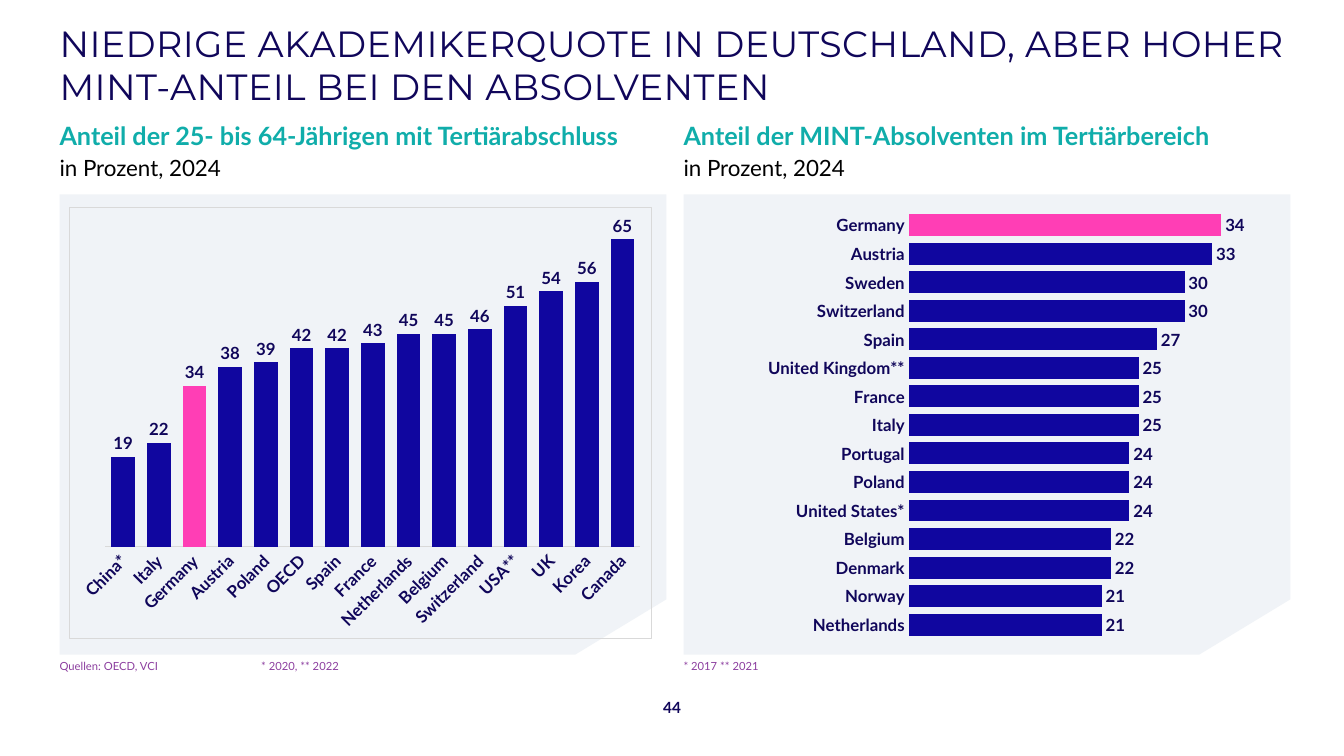
import dataclasses
import pptx
import pptx.chart.data
import pptx.dml.color
import pptx.enum.chart
import pptx.enum.text
import pptx.oxml
import pptx.util
from pptx.oxml.ns import nsdecls, qn


@dataclasses.dataclass(frozen=True)
class Theme:
    head: str = "Montserrat"
    body: str = "Lato"
    ink: str = "10065A"
    bar: str = "10069F"
    mark: str = "FF3EB5"
    teal: str = "10ADAA"
    note: str = "8C3E9F"
    black: str = "000000"
    panel: str = "F0F3F7"
    rule: str = "D9D9D9"
    title: int = 26
    lead: int = 18
    unit: int = 16
    label: int = 12
    page: int = 11
    small: int = 8


THEME = Theme()
WIDE = pptx.util.Inches(13.33)
HIGH = pptx.util.Inches(7.5)
LEFT, PITCH, COL = 4.43, 46.43, 45.16
TOP, DEEP = 25.73, 60.85
CUT = [(1, 0), (1, 0.88), (0.85, 1), (0, 1)]
Anchor = pptx.enum.text.MSO_ANCHOR
Align = pptx.enum.text.PP_ALIGN
Kind = pptx.enum.chart.XL_CHART_TYPE
Tick = pptx.enum.chart.XL_TICK_MARK

SHARES = [
    ("China*", 19), ("Italy", 22), ("Germany", 34), ("Austria", 38),
    ("Poland", 39), ("OECD", 42), ("Spain", 42), ("France", 43),
    ("Netherlands", 45), ("Belgium", 45), ("Switzerland", 46),
    ("USA**", 51), ("UK", 54), ("Korea", 56), ("Canada", 65),
]
GRADS = [
    ("Netherlands", 21), ("Norway", 21), ("Denmark", 22), ("Belgium", 22),
    ("United States*", 24), ("Poland", 24), ("Portugal", 24), ("Italy", 25),
    ("France", 25), ("United Kingdom**", 25), ("Spain", 27),
    ("Switzerland", 30), ("Sweden", 30), ("Austria", 33), ("Germany", 34),
]


def color(code):
    return pptx.dml.color.RGBColor.from_string(code)


def area(left, top, width, height):
    return [round(share * side / 100) for share, side in
            zip((left, top, width, height), (WIDE, HIGH, WIDE, HIGH))]


def style(font, size, code, bold=False, face=THEME.body):
    font.name = face
    font.size = pptx.util.Pt(size)
    font.bold = bold
    font.color.rgb = color(code)


def add_text(slide, box, text, size, code, bold=False, face=THEME.body,
             anchor=Anchor.TOP, align=Align.LEFT, tab=None, track=None):
    frame = slide.shapes.add_textbox(*area(*box)).text_frame
    frame.word_wrap = True
    frame.vertical_anchor = anchor
    frame.margin_left = frame.margin_right = 0
    frame.margin_top = frame.margin_bottom = 0
    para = frame.paragraphs[0]
    para.alignment = align
    if tab:
        stop = f'<a:tabLst {nsdecls("a")}><a:tab pos="{tab}" algn="l"/></a:tabLst>'
        para._p.get_or_add_pPr().append(pptx.oxml.parse_xml(stop))
    run = para.add_run()
    run.text = text
    style(run.font, size, code, bold, face)
    if track:
        run._r.get_or_add_rPr().set("spc", str(track))


def add_panel(slide, left):
    x, y, width, height = area(left, TOP, COL, DEEP)
    form = slide.shapes.build_freeform(x, y)
    form.add_line_segments(
        [(round(x + a * width), round(y + b * height)) for a, b in CUT])
    shape = form.convert_to_shape()
    shape.shadow.inherit = False
    shape.fill.solid()
    shape.fill.fore_color.rgb = color(THEME.panel)
    shape.line.fill.background()


def frame_chart(chart, edge):
    fill = f'<a:solidFill><a:srgbClr val="{THEME.rule}"/></a:solidFill>'
    line = fill if edge else "<a:noFill/>"
    xml = (f'<c:spPr {nsdecls("c", "a")}><a:noFill/>'
           f'<a:ln w="9525">{line}</a:ln></c:spPr>')
    chart._chartSpace.find(qn("c:txPr")).addprevious(pptx.oxml.parse_xml(xml))


def place_plot(chart, box):
    plot = chart._chartSpace.chart.plotArea
    for old in plot.findall(qn("c:layout")):
        plot.remove(old)
    modes = "".join(f'<c:{key}Mode val="edge"/>' for key in "xy")
    sides = "".join(f'<c:{key} val="{val}"/>' for key, val in zip("xywh", box))
    xml = (f'<c:layout {nsdecls("c")}><c:manualLayout>'
           f'<c:layoutTarget val="inner"/>{modes}{sides}'
           f'</c:manualLayout></c:layout>')
    plot.insert(0, pptx.oxml.parse_xml(xml))


def add_bars(slide, left, kind, rows, top, gap, edge=False, turn=None, plot=None):
    data = pptx.chart.data.CategoryChartData()
    names, values = zip(*rows)
    data.categories = names
    data.add_series("Series 1", values)
    box = area(left + 0.68, TOP + 1.6, 43.44, 57.2)
    chart = slide.shapes.add_chart(kind, *box, data).chart
    chart.has_title = chart.has_legend = False
    style(chart.font, THEME.label, THEME.ink, True)
    frame_chart(chart, edge)
    if plot:
        place_plot(chart, plot)

    scale = chart.value_axis
    scale.minimum_scale, scale.maximum_scale = 0, top
    scale.has_major_gridlines = False
    scale.visible = False
    axis = chart.category_axis
    axis.major_tick_mark = axis.minor_tick_mark = Tick.NONE
    style(axis.tick_labels.font, THEME.label, THEME.ink, True)
    if turn:
        body = axis._element.find(qn("c:txPr")).find(qn("a:bodyPr"))
        body.set("rot", str(turn * 60000))
    if edge:
        axis.format.line.color.rgb = color(THEME.rule)
        axis.format.line.width = pptx.util.Pt(0.75)
    else:
        axis.format.line.fill.background()

    bars = chart.plots[0]
    bars.vary_by_categories = False
    bars.gap_width = gap
    series = bars.series[0]
    series.invert_if_negative = False
    point = series.points[names.index("Germany")]
    for item, code in ((series, THEME.bar), (point, THEME.mark)):
        item.format.fill.solid()
        item.format.fill.fore_color.rgb = color(code)
    labels = series.data_labels
    labels.show_value = True
    labels.number_format = "#,##0"
    labels.number_format_is_linked = False
    labels.position = pptx.enum.chart.XL_LABEL_POSITION.OUTSIDE_END
    style(labels.font, THEME.label, THEME.ink, True)


def add_column(slide, left, lead, note):
    add_panel(slide, left)
    add_text(slide, (left, 15.87, COL, 4.13), lead, THEME.lead, THEME.teal, True)
    add_text(slide, (left, 20.4, COL, 3.73), "in Prozent, 2024",
             THEME.unit, THEME.black)
    add_text(slide, (left, 87.2, 38.11, 1.73), note, THEME.small, THEME.note,
             tab=pptx.util.Inches(2))


def main():
    deck = pptx.Presentation()
    deck.slide_width, deck.slide_height = WIDE, HIGH
    slide = deck.slides.add_slide(deck.slide_layouts[6])
    right = LEFT + PITCH
    add_text(slide, (LEFT, 2, 91.52, 13.07),
             "NIEDRIGE AKADEMIKERQUOTE IN DEUTSCHLAND, ABER HOHER "
             "MINT-ANTEIL BEI DEN ABSOLVENTEN",
             THEME.title, THEME.ink, face=THEME.head, anchor=Anchor.MIDDLE,
             track=30)
    add_column(slide, LEFT, "Anteil der 25- bis 64-Jährigen mit Tertiärabschluss",
               "Quellen: OECD, VCI\t* 2020, ** 2022")
    add_column(slide, right, "Anteil der MINT-Absolventen im Tertiärbereich",
               "* 2017 ** 2021")
    add_bars(slide, LEFT, Kind.COLUMN_CLUSTERED, SHARES, 70, 50,
             edge=True, turn=-45)
    add_bars(slide, right, Kind.BAR_CLUSTERED, GRADS, 40, 30,
             plot=(0.37, 0.01, 0.63, 0.99))
    add_text(slide, (47.79, 91.73, 4.43, 3.73), "44", THEME.page, THEME.ink,
             True, anchor=Anchor.MIDDLE, align=Align.CENTER)
    deck.save("out.pptx")


if __name__ == "__main__":
    main()
